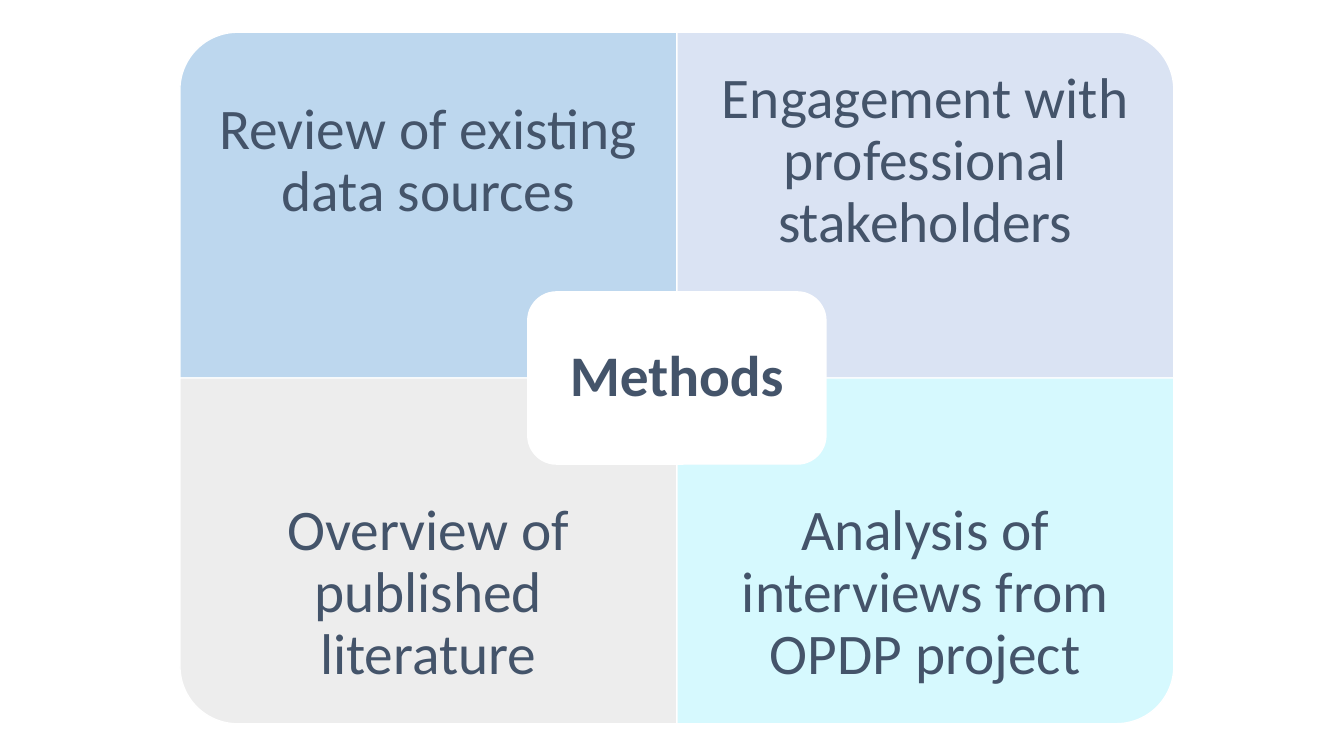
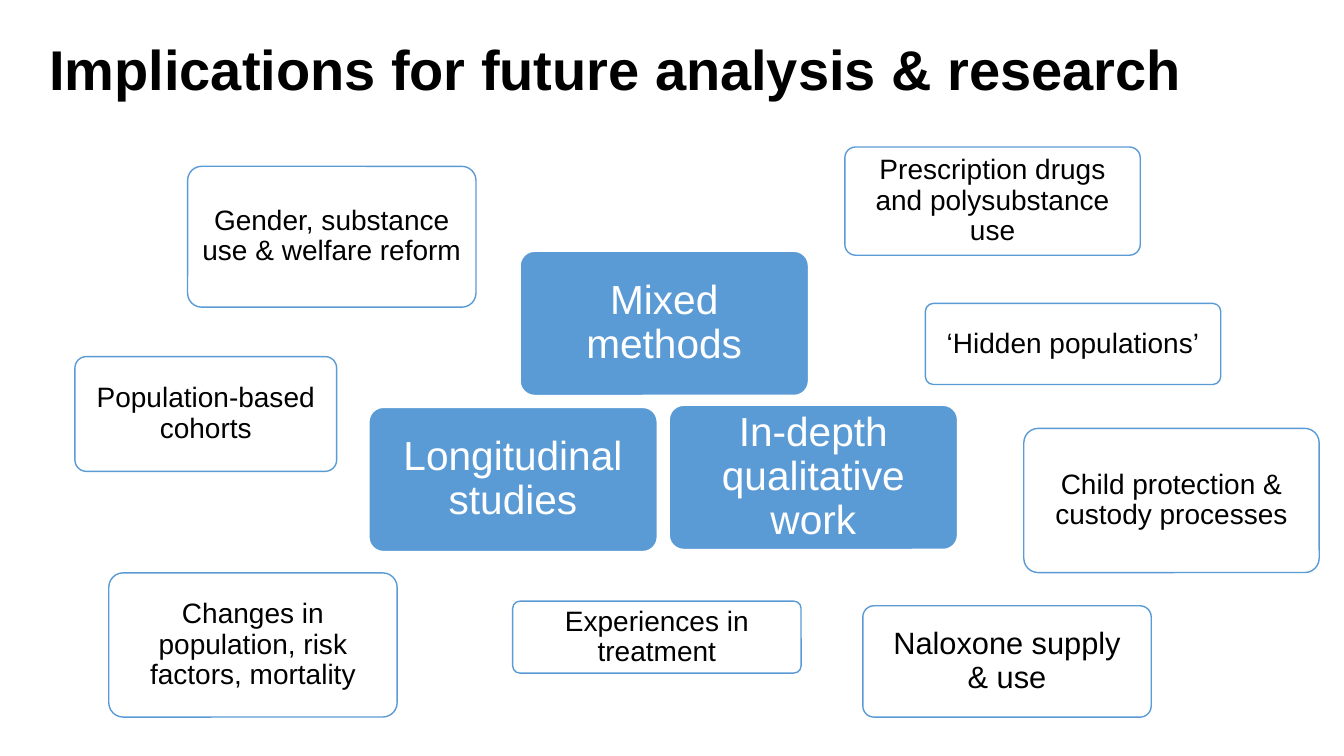
from pptx import Presentation
from pptx.dml.color import RGBColor
from pptx.enum.shapes import MSO_SHAPE
from pptx.enum.text import MSO_ANCHOR, MSO_AUTO_SIZE, PP_ALIGN
from pptx.util import Pt

ROUND_RECT = MSO_SHAPE.ROUNDED_RECTANGLE
ONE_ROUND_CORNER = MSO_SHAPE.ROUND_1_RECTANGLE
CENTER, LEFT = PP_ALIGN.CENTER, PP_ALIGN.LEFT
MIDDLE = MSO_ANCHOR.MIDDLE
NO_AUTOFIT = MSO_AUTO_SIZE.NONE

WHITE = RGBColor(0xFF, 0xFF, 0xFF)
BLACK = RGBColor(0x00, 0x00, 0x00)
SLATE = RGBColor(0x44, 0x54, 0x6A)
BLUE = RGBColor(0x5B, 0x9B, 0xD5)
SKY = RGBColor(0xBD, 0xD7, 0xEE)
LAVENDER = RGBColor(0xDA, 0xE3, 0xF3)
GREY = RGBColor(0xED, 0xED, 0xED)
AQUA = RGBColor(0xD6, 0xF9, 0xFE)

TITLE_ONLY, BLANK = 5, 6

# Methods matrix
MATRIX_X, MATRIX_Y = 483.5, 270  # centre
QUADRANT_W, QUADRANT_H = 355, 247
QUADRANT_TEXT_H = 185
HUB_W, HUB_H = 213, 123
METHOD_SIZE = 41
# column, row, rotation that turns the round corner outwards
QUADRANTS = [
    ("Review of existing data sources", 0, 0, 270, SKY),
    ("Engagement with professional stakeholders", 1, 0, 0, LAVENDER),
    ("Overview of published literature", 0, 1, 180, GREY),
    ("Analysis of interviews from OPDP project", 1, 1, 90, AQUA),
]

# Research themes: text, left, top, width, height
APPROACH_W, APPROACH_H = 206, 103
APPROACHES = [
    ("Longitudinal studies", 263.5, 291),
    ("In-depth qualitative work", 478, 289.5),
    ("Mixed methods", 371.5, 179.5),
]
TOPICS = [
    ("Population-based cohorts", 53.5, 254.7, 187, 82),
    ("Changes in population, risk factors, mortality", 77.7, 409.2, 206, 103),
    ("Experiences in treatment", 366.2, 429.4, 206, 51.4),
    ("Gender, substance use & welfare reform", 134, 118.8, 206, 100.6),
    ("Prescription drugs and polysubstance use", 603.5, 105, 211, 77.3),
    ("‘Hidden populations’", 661, 216.7, 211, 58),
    ("Child protection & custody processes", 731.3, 306, 211, 103),
]


def write(box, text, font, size, color, bold=False, align=CENTER, inset=(7.2, 3.6)):
    frame = box.text_frame
    frame.auto_size = NO_AUTOFIT
    frame.word_wrap = True
    frame.vertical_anchor = MIDDLE
    frame.margin_left = frame.margin_right = Pt(inset[0])
    frame.margin_top = frame.margin_bottom = Pt(inset[1])
    para = frame.paragraphs[0]
    para.alignment = align
    para.line_spacing = 0.9
    span = para.add_run()
    span.text = text
    span.font.name = font
    span.font.size = Pt(size)
    span.font.bold = bold
    span.font.color.rgb = color


def add_panel(page, kind, left, top, width, height, fill, line):
    panel = page.shapes.add_shape(kind, Pt(left), Pt(top), Pt(width), Pt(height))
    panel.shadow.inherit = False
    panel.fill.solid()
    panel.fill.fore_color.rgb = fill
    panel.line.color.rgb = line
    panel.line.width = Pt(1)
    return panel


def add_quadrant(page, text, column, row, rotation, fill):
    """Draw one quarter of the matrix, with its text kept upright."""
    left = MATRIX_X + (column - 1) * QUADRANT_W
    top = MATRIX_Y + (row - 1) * QUADRANT_H
    width, height = QUADRANT_W, QUADRANT_H
    if rotation % 180:
        width, height = height, width
    panel = add_panel(page, ONE_ROUND_CORNER, left + (QUADRANT_W - width) / 2,
                      top + (QUADRANT_H - height) / 2, width, height, fill, WHITE)
    panel.rotation = rotation

    text_top = top + row * (QUADRANT_H - QUADRANT_TEXT_H)
    box = page.shapes.add_textbox(Pt(left), Pt(text_top),
                                  Pt(QUADRANT_W), Pt(QUADRANT_TEXT_H))
    write(box, text, "Calibri", METHOD_SIZE, SLATE, inset=(23, 23))


def add_card(page, text, left, top, width, height, fill=WHITE, color=BLACK,
             line=BLUE, size=20, inset=(3.5, 2)):
    card = add_panel(page, ROUND_RECT, left, top, width, height, fill, line)
    card.adjustments[0] = 0.1
    write(card, text, "Arial", size, color, inset=inset)


def add_title(page, text):
    title = page.shapes.title
    title.left, title.top, title.width, title.height = Pt(28), Pt(0), Pt(860), Pt(104)
    write(title, text, "Arial", 40, BLACK, bold=True, align=LEFT)


def build_methods(deck):
    page = deck.slides.add_slide(deck.slide_layouts[BLANK])
    for quadrant in QUADRANTS:
        add_quadrant(page, *quadrant)
    hub = add_panel(page, ROUND_RECT, MATRIX_X - HUB_W / 2, MATRIX_Y - HUB_H / 2,
                    HUB_W, HUB_H, WHITE, WHITE)
    write(hub, "Methods", "Calibri", METHOD_SIZE, SLATE, bold=True, inset=(12, 12))


def build_implications(deck):
    page = deck.slides.add_slide(deck.slide_layouts[TITLE_ONLY])
    add_title(page, "Implications for future analysis & research")
    for text, left, top in APPROACHES:
        add_card(page, text, left, top, APPROACH_W, APPROACH_H,
                 fill=BLUE, color=WHITE, line=WHITE, size=29, inset=(4, 3))
    for topic in TOPICS:
        add_card(page, *topic)
    add_card(page, "Naloxone supply & use", 616.3, 432.7, 206, 79.5,
             size=22, inset=(17, 2))


def main():
    deck = Presentation()
    deck.slide_width, deck.slide_height = Pt(960), Pt(540)
    build_methods(deck)
    build_implications(deck)
    deck.save("out.pptx")


if __name__ == "__main__":
    main()
